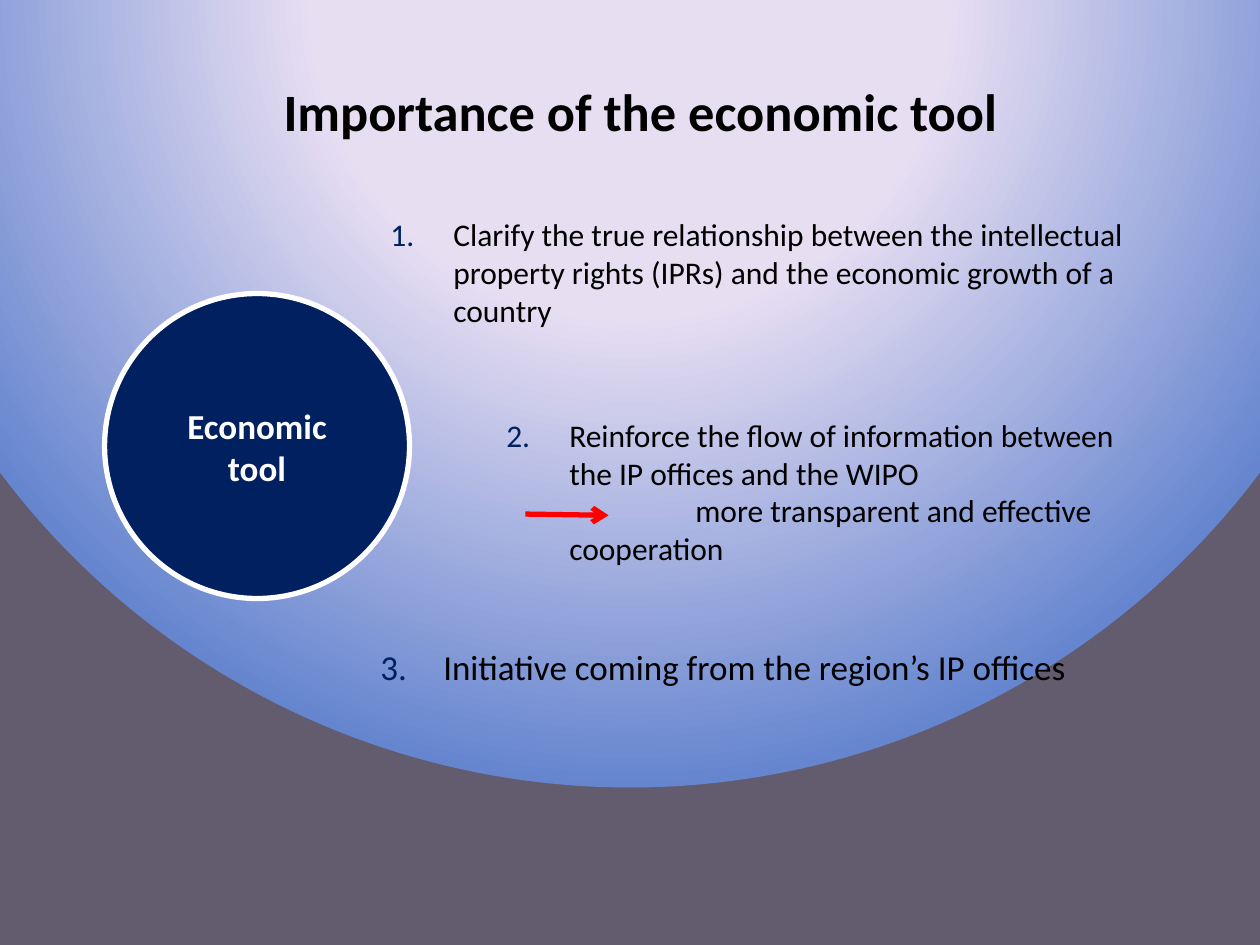
from lxml import etree
from pptx import Presentation
from pptx.dml.color import RGBColor
from pptx.enum.shapes import MSO_CONNECTOR, MSO_SHAPE
from pptx.enum.text import MSO_ANCHOR, MSO_AUTO_SIZE, PP_ALIGN
from pptx.oxml import parse_xml
from pptx.oxml.ns import nsdecls, qn
from pptx.util import Inches, Pt

TOP, MIDDLE, CENTER = MSO_ANCHOR.TOP, MSO_ANCHOR.MIDDLE, PP_ALIGN.CENTER
FIT_SHAPE, NO_FIT = MSO_AUTO_SIZE.SHAPE_TO_FIT_TEXT, MSO_AUTO_SIZE.NONE
WIDTH, HEIGHT = 10, 7.5
HANG = 0.5
LINE_WIDTH = 3
COLORS = {"navy": "002060", "white": "FFFFFF", "black": "000000", "red": "FF0000"}

# Content
TITLE = "Importance of the economic tool"
HUB = "Economic tool"
REASONS = [  # left, top, width, height, size, text, consequence
    (3, 1.66, 6.67, 1.01, 18,
     "Clarify the true relationship between the intellectual property rights (IPRs) "
     "and the economic growth of a country", None),
    (3.92, 3.25, 5.17, 1.31, 18,
     "Reinforce the flow of information between the IP offices and the WIPO",
     "more transparent and effective cooperation"),
    (2.92, 5.07, 6.67, 0.44, 20,
     "Initiative coming from the region’s IP offices", None),
]
TITLE_BOX = (0.67, 0.58, 8.83, 0.92)
HUB_BOX = (0.83, 2.33, 2.42, 2.42)
ARROW = (4.17, 4.08, 4.83, 4.09)
GLOW_STOPS = [(40, "E7DEF2"), (100, "6585CF"), (100, "635B6E")]
GLOW_FOCUS = {"l": 50, "t": -80, "r": 50, "b": 180}


def inches(lengths):
    return [Inches(length) for length in lengths]


def color(name):
    return RGBColor.from_string(COLORS[name])


def write(paragraph, text, size, color_name="black", bold=False):
    run = paragraph.add_run()
    run.text = text
    style = {"name": "Calibri", "size": Pt(size), "bold": bold}
    for key, value in style.items():
        setattr(run.font, key, value)
    run.font.color.rgb = color(color_name)


def indent(paragraph, first_line):
    props = paragraph._p.get_or_add_pPr()
    props.set("marL", str(Inches(HANG)))
    props.set("indent", str(Inches(first_line)))
    return props


def number(paragraph, start):
    props = indent(paragraph, -HANG)
    bullet_color = etree.SubElement(props, qn("a:buClr"))
    etree.SubElement(bullet_color, qn("a:srgbClr"), val=COLORS["navy"])
    etree.SubElement(props, qn("a:buFont"), typeface="+mj-lt")
    etree.SubElement(props, qn("a:buAutoNum"), type="arabicPeriod", startAt=str(start))


def paint_background(slide):
    slide.background.fill.solid()
    stops = "".join(f'<a:gs pos="{pos * 1000}"><a:srgbClr val="{rgb}"/></a:gs>'
                    for pos, rgb in GLOW_STOPS)
    focus = " ".join(f'{side}="{share * 1000}"' for side, share in GLOW_FOCUS.items())
    glow = parse_xml(f'<a:gradFill {nsdecls("a")} rotWithShape="1"><a:gsLst>{stops}</a:gsLst>'
                     f'<a:path path="circle"><a:fillToRect {focus}/></a:path></a:gradFill>')
    solid = slide.element.xpath(".//p:bgPr/a:solidFill")[0]
    solid.getparent().replace(solid, glow)


def add_title(slide):
    title = slide.shapes.title
    title.left, title.top, title.width, title.height = inches(TITLE_BOX)
    frame = title.text_frame
    for key, value in {"vertical_anchor": TOP, "word_wrap": True, "auto_size": NO_FIT}.items():
        setattr(frame, key, value)
    frame.paragraphs[0].alignment = CENTER
    write(frame.paragraphs[0], TITLE, 30, bold=True)


def add_hub(slide):
    hub = slide.shapes.add_shape(MSO_SHAPE.OVAL, *inches(HUB_BOX))
    hub.shadow.inherit = False
    hub.fill.solid()
    hub.fill.fore_color.rgb = color("navy")
    hub.line.color.rgb = color("white")
    hub.line.width = Pt(LINE_WIDTH)
    frame = hub.text_frame
    frame.word_wrap = True
    frame.vertical_anchor = MIDDLE
    frame.paragraphs[0].alignment = CENTER
    write(frame.paragraphs[0], HUB, 20, "white", bold=True)


def add_reasons(slide):
    for position, (*box, size, text, consequence) in enumerate(REASONS, 1):
        frame = slide.shapes.add_textbox(*inches(box)).text_frame
        frame.word_wrap = True
        frame.auto_size = FIT_SHAPE
        number(frame.paragraphs[0], position)
        write(frame.paragraphs[0], text, size)
        if consequence:
            # First line leaves room for the arrow
            result = frame.add_paragraph()
            indent(result, 2 * HANG)
            write(result, consequence, size)


def add_arrow(slide):
    arrow = slide.shapes.add_connector(MSO_CONNECTOR.STRAIGHT, *inches(ARROW))
    arrow.line.color.rgb = color("red")
    arrow.line.width = Pt(LINE_WIDTH)
    etree.SubElement(arrow.line._get_or_add_ln(), qn("a:tailEnd"), type="arrow")
    etree.SubElement(arrow._element.spPr, qn("a:effectLst"))


def main():
    deck = Presentation()
    deck.slide_width, deck.slide_height = inches((WIDTH, HEIGHT))
    slide = deck.slides.add_slide(deck.slide_layouts[5])
    paint_background(slide)
    add_hub(slide)
    add_reasons(slide)
    add_arrow(slide)
    add_title(slide)
    deck.save("out.pptx")


if __name__ == "__main__":
    main()
